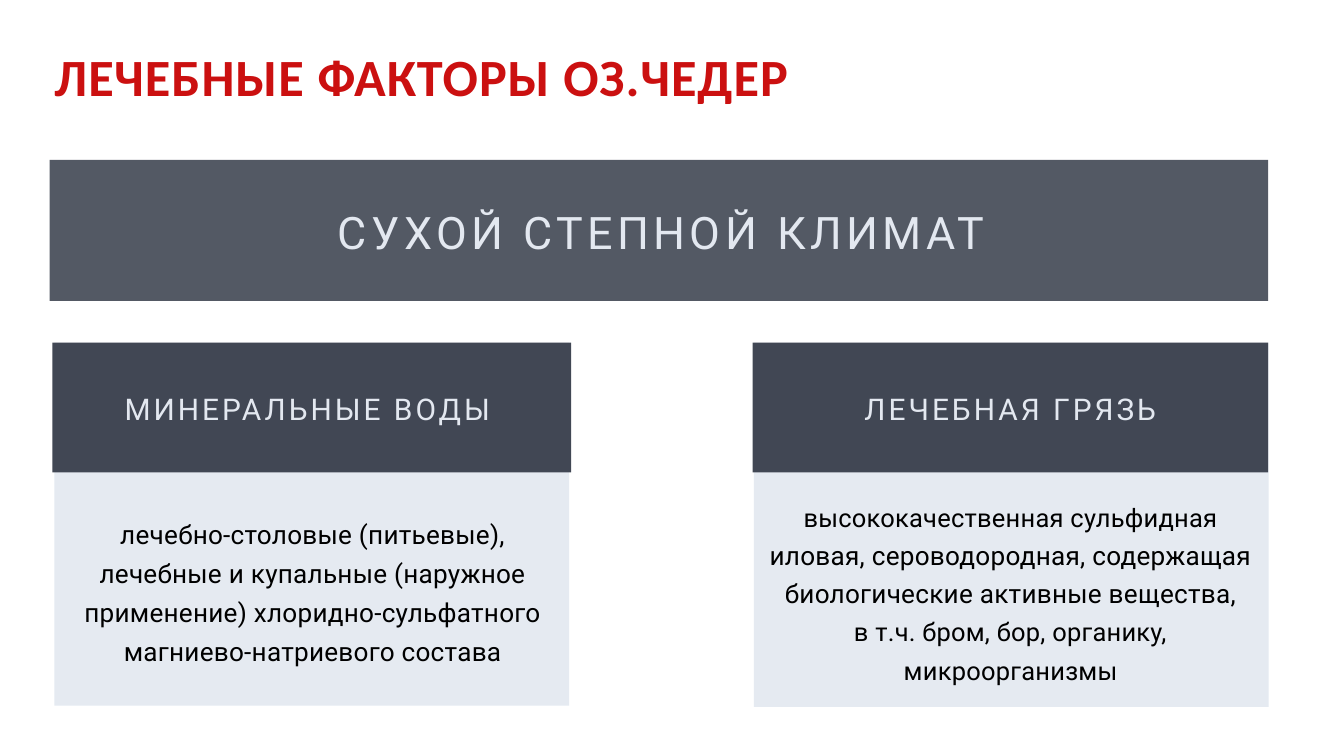
from dataclasses import dataclass

from lxml.etree import SubElement
from pptx import Presentation
from pptx.dml.color import RGBColor
from pptx.enum.shapes import MSO_SHAPE
from pptx.enum.text import MSO_ANCHOR, PP_ALIGN
from pptx.oxml.ns import qn
from pptx.shapes.autoshape import Shape
from pptx.slide import Slide
from pptx.util import Inches, Length, Pt

COLORS = {"red": "CB1010", "slate": "414754", "mist": "E3E8F0", "black": "000000"}
COLUMNS, ROWS = 20, 11.25
CELL = Inches(1)
CARD_TOP, HEADER_ROWS = 5.1, 1.93
FRAME = {
    "margin_left": 0,
    "margin_top": 0,
    "margin_right": 0,
    "margin_bottom": 0,
    "word_wrap": True,
    "vertical_anchor": MSO_ANCHOR.TOP,
}


@dataclass(frozen=True)
class Area:
    """Place on the slide grid, in columns and rows."""
    column: float
    row: float
    columns: float
    rows: float

    def lengths(self) -> dict[str, Length]:
        values = (self.column, self.row, self.columns, self.rows)
        return {
            name: Length(round(value * CELL))
            for name, value in zip(("left", "top", "width", "height"), values)
        }


@dataclass(frozen=True)
class Style:
    size: float
    line: float
    color: str
    spacing: float
    font: str = "Roboto"
    bold: bool = False
    align: PP_ALIGN = PP_ALIGN.CENTER


@dataclass(frozen=True)
class Card:
    panel: Area
    header: Area
    label_area: Area
    label: str
    body_area: Area
    body: tuple[tuple[str, Style], ...]


TITLE = Style(56, 63.8, "red", 1.1, "Calibri", True, PP_ALIGN.LEFT)
BANNER = Style(48, 67.2, "mist", 4.8)
LABEL = Style(32, 44.8, "mist", 3.2)
WATER = Style(28, 42, "black", 0.3)
MUD = Style(28, 41, "black", 0.3)
MUD_SMALL = Style(27.3, 41, "black", 0.3)

CARDS = (
    Card(
        Area(0.81, CARD_TOP, 7.66, 5.4),
        Area(0.78, CARD_TOP, 7.72, HEADER_ROWS),
        Area(0.74, 5.72, 7.67, 0.6),
        "МИНЕРАЛЬНЫЕ ВОДЫ",
        Area(1.12, 7.59, 7.07, 2.28),
        ((
            "лечебно-столовые (питьевые), лечебные и купальные (наружное "
            "применение) хлоридно-сульфатного магниево-натриевого состава",
            WATER,
        ),),
    ),
    Card(
        Area(11.22, CARD_TOP, 7.66, 5.42),
        Area(11.2, CARD_TOP, 7.67, HEADER_ROWS),
        Area(11.2, 5.72, 7.67, 0.6),
        "ЛЕЧЕБНАЯ ГРЯЗЬ",
        Area(11.42, 7.35, 7.24, 2.77),
        (
            ("высококачественная сульфидная", MUD_SMALL),
            ("иловая, сероводородная, содержащая биологические активные вещества,", MUD),
            ("в т.ч. бром, бор, органику, микроорганизмы", MUD_SMALL),
        ),
    ),
)


def add_block(page: Slide, area: Area, color: str, opacity: int = 100) -> None:
    block = page.shapes.add_shape(MSO_SHAPE.RECTANGLE, **area.lengths())
    block.shadow.inherit = False
    block.line.fill.background()
    block.fill.solid()
    block.fill.fore_color.rgb = RGBColor.from_string(COLORS[color])
    if opacity < 100:
        tint = block.fill._xPr.find(f"{qn('a:solidFill')}/{qn('a:srgbClr')}")
        SubElement(tint, qn("a:alpha"), val=str(opacity * 1000))


def write(box: Shape, *lines: tuple[str, Style]) -> None:
    """Fill a box with one styled paragraph per line."""
    frame = box.text_frame
    for name, value in FRAME.items():
        setattr(frame, name, value)
    for index, (text, style) in enumerate(lines):
        para = frame.add_paragraph() if index else frame.paragraphs[0]
        para.alignment = style.align
        para.line_spacing = Pt(style.line)
        span = para.add_run()
        span.text = text
        values = {"name": style.font, "size": Pt(style.size), "bold": style.bold}
        for name, value in values.items():
            setattr(span.font, name, value)
        span.font.color.rgb = RGBColor.from_string(COLORS[style.color])
        span._r.get_or_add_rPr().set("spc", str(round(style.spacing * 100)))


def add_text(page: Slide, area: Area, *lines: tuple[str, Style]) -> None:
    write(page.shapes.add_textbox(**area.lengths()), *lines)


def add_card(page: Slide, card: Card) -> None:
    add_block(page, card.panel, "mist", 90)
    add_block(page, card.header, "slate")
    add_text(page, card.label_area, (card.label, LABEL))
    add_text(page, card.body_area, *card.body)


def main() -> None:
    deck = Presentation()
    deck.slide_width = Length(round(COLUMNS * CELL))
    deck.slide_height = Length(round(ROWS * CELL))
    page = deck.slides.add_slide(deck.slide_layouts[5])

    title = page.shapes.title
    for name, value in Area(0.81, 0.7, 17.65, 0.89).lengths().items():
        setattr(title, name, value)
    write(title, ("ЛЕЧЕБНЫЕ ФАКТОРЫ ОЗ.ЧЕДЕР", TITLE))

    for card in CARDS:
        add_card(page, card)

    add_block(page, Area(0.74, 2.38, 18.13, 2.1), "slate", 90)
    add_text(page, Area(0.8, 2.92, 18.09, 0.9), ("СУХОЙ СТЕПНОЙ КЛИМАТ", BANNER))
    deck.save("out.pptx")


if __name__ == "__main__":
    main()
